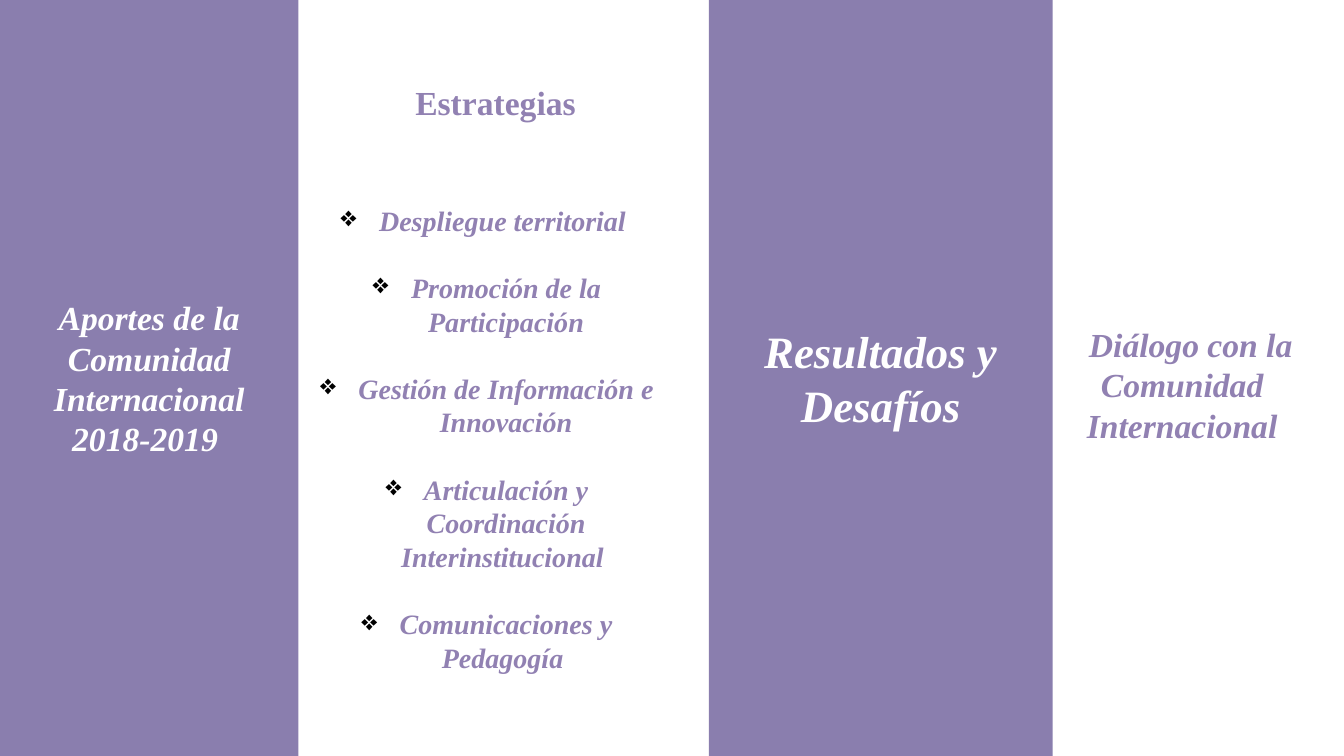
from lxml import etree
from pptx import Presentation
from pptx.dml.color import RGBColor
from pptx.enum.shapes import MSO_SHAPE
from pptx.enum.text import MSO_ANCHOR, PP_ALIGN
from pptx.oxml.ns import qn
from pptx.util import Inches, Pt

RECT = MSO_SHAPE.RECTANGLE
MIDDLE = MSO_ANCHOR.MIDDLE
CENTER = PP_ALIGN.CENTER
FONT = "Times New Roman"
PURPLE, LILAC, WHITE, BLACK = "8A7EAE", "9181B2", "FFFFFF", "000000"


def color(code):
    return RGBColor.from_string(code)


def write(frame, text, size=24, ink=LILAC, italic=True, before=0,
          indent=0, bullet=None):
    """Add one centred paragraph, reusing the empty first one."""
    para = frame.paragraphs[0]
    if para.runs:
        para = frame.add_paragraph()
    para.alignment = CENTER
    para.line_spacing = Pt(round(size * 1.2, 1))
    para.space_before = Pt(before)
    props = para._p.get_or_add_pPr()
    props.set("indent", str(Inches(indent)))
    if bullet:
        props.set("marL", str(Inches(-indent)))
        tint = etree.SubElement(props, qn("a:buClr"))
        etree.SubElement(tint, qn("a:srgbClr")).set("val", BLACK)
        etree.SubElement(props, qn("a:buChar")).set("char", bullet)
    run = para.add_run()
    run.text = text
    for font in (para.font, run.font):
        font.name, font.size = FONT, Pt(size)
        font.bold, font.italic = True, italic
        font.color.rgb = color(ink)


deck = Presentation()
deck.slide_width, deck.slide_height = Inches(13.33), Inches(7.5)
slide = deck.slides.add_slide(deck.slide_layouts[6])

# Four columns: left, width, height, fill
frames = []
for left, width, height, fill in [
    (0, 2.96, 7.5, PURPLE),
    (2.96, 3.74, 7.5, None),
    (7.03, 3.41, 7.5, PURPLE),
    (10.11, 3.23, 7.63, None),
]:
    area = Inches(left), Inches(0), Inches(width), Inches(height)
    if fill:
        panel = slide.shapes.add_shape(RECT, *area)
        panel.shadow.inherit = False
        panel.fill.solid()
        panel.fill.fore_color.rgb = color(fill)
        panel.line.fill.background()
    else:
        panel = slide.shapes.add_textbox(*area)
    frame = panel.text_frame
    frame.word_wrap = True
    frame.vertical_anchor = MIDDLE
    frame.margin_left = frame.margin_right = Inches(0.13)
    frame.margin_top = frame.margin_bottom = Inches(0.07)
    frames.append(frame)
aid, plan, result, talk = frames

# Contributions
write(aid, "Aportes de la Comunidad Internacional", ink=WHITE)
write(aid, "2018-2019 ", ink=WHITE)

# Strategies, with a wider gap under the heading
write(plan, "Estrategias", italic=False, indent=0.17)
for i, item in enumerate([
    "Despliegue territorial ",
    "Promoción de la Participación",
    "Gestión de Información e Innovación",
    "Articulación y Coordinación Interinstitucional ",
    "Comunicaciones y Pedagogía ",
]):
    write(plan, item, size=20, before=24 if i else 57.6,
          indent=-0.38, bullet="❖")

# Results and dialogue
write(result, "Resultados y Desafíos", size=32, ink=WHITE)
write(talk, "Diálogo con la Comunidad Internacional", indent=0.17)

deck.save("out.pptx")
